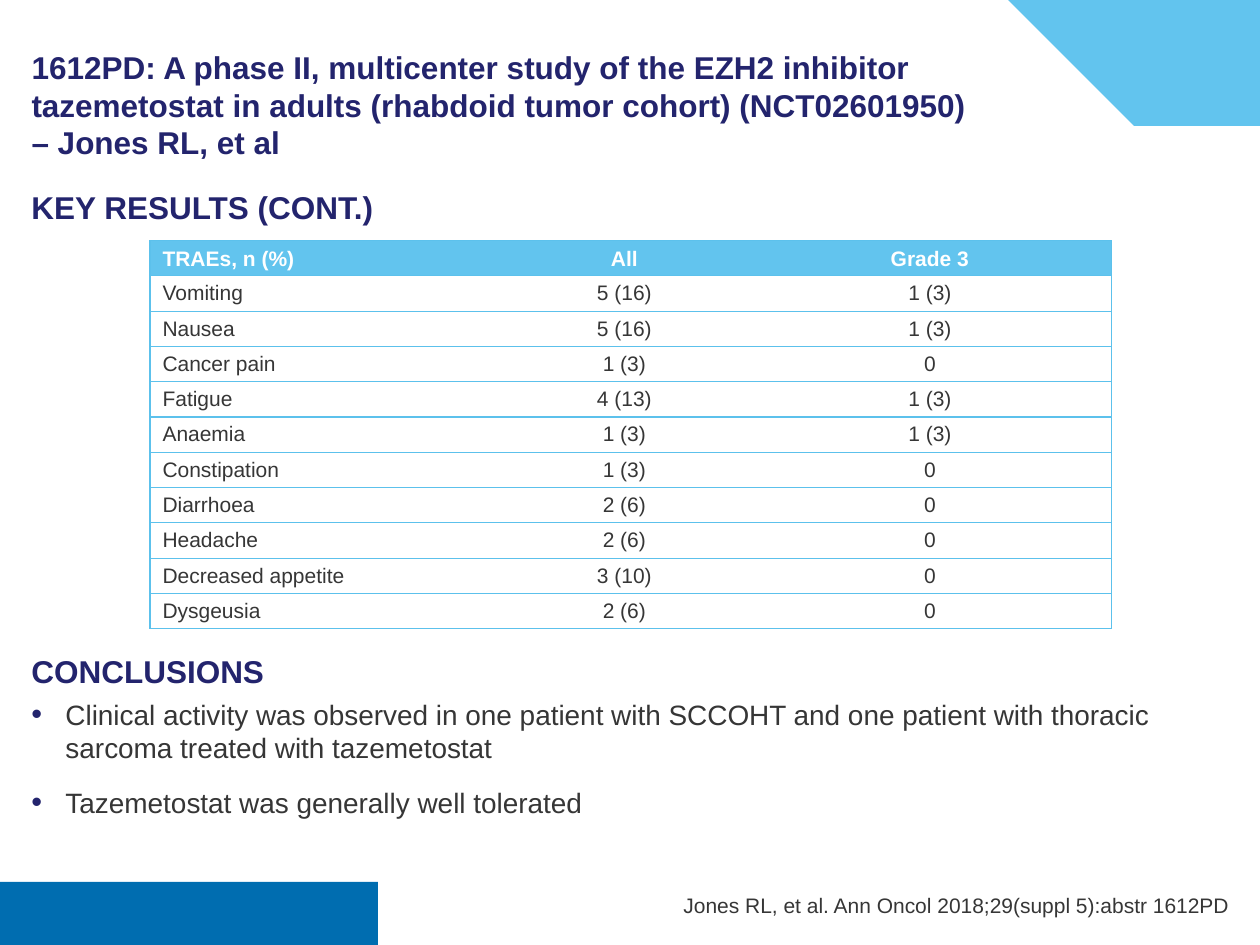
from lxml.etree import SubElement
from pptx import Presentation
from pptx.dml.color import RGBColor
from pptx.enum.text import MSO_ANCHOR, MSO_AUTO_SIZE, PP_ALIGN
from pptx.oxml.ns import qn
from pptx.util import Inches, Pt

COLORS = {"sky": "62C4EE", "blue": "006DB0", "navy": "23246D",
          "text": "363636", "rule": "5CC1EC", "white": "FFFFFF"}
FONT = "Arial"
PLAIN_TABLE_STYLE = "{2D5ABB26-0587-4C30-8999-92F81FD0307C}"

TITLE = ("1612PD: A phase II, multicenter study of the EZH2 inhibitor "
         "tazemetostat in adults (rhabdoid tumor cohort) (NCT02601950) "
         "\v– Jones RL, et al")
RESULTS_HEADING = "KEY RESULTS (CONT.)"
CONCLUSIONS_HEADING = "CONCLUSIONS"
CONCLUSIONS = [
    "Clinical activity was observed in one patient with SCCOHT and one "
    "patient with thoracic sarcoma treated with tazemetostat",
    "Tazemetostat was generally well tolerated",
]
CITATION = "Jones RL, et al. Ann Oncol 2018;29(suppl 5):abstr 1612PD"
ADVERSE_EVENTS = [
    ("TRAEs, n (%)", "All", "Grade 3"),
    ("Vomiting", "5 (16)", "1 (3)"),
    ("Nausea", "5 (16)", "1 (3)"),
    ("Cancer pain", "1 (3)", "0"),
    ("Fatigue", "4 (13)", "1 (3)"),
    ("Anaemia", "1 (3)", "1 (3)"),
    ("Constipation", "1 (3)", "0"),
    ("Diarrhoea", "2 (6)", "0"),
    ("Headache", "2 (6)", "0"),
    ("Decreased appetite", "3 (10)", "0"),
    ("Dysgeusia", "2 (6)", "0"),
]
COLUMN_WIDTHS = [2.78, 1.97, 2.88]
TABLE_LEFT, TABLE_TOP, TABLE_HEIGHT = 1.19, 1.91, 3.07

# Outlines in inches: a pair is a straight step, a triple of pairs is a Bézier curve
WAVES = [
    ("sky", [(5.15, 0), (10, 0), (10, 1.19), (9.93, 1.12),
             ((9.89, 1.09), (9.86, 1.06), (9.82, 1.03)),
             ((9.17, 0.62), (8.64, 0.43), (6.08, 0.18)),
             ((5.77, 0.15), (5.49, 0.09), (5.23, 0.02))]),
    ("blue", [(0.67, 6.77),
              ((1.45, 6.75), (2.18, 7.19), (2.52, 7.47)),
              (2.55, 7.5), (0, 7.5), (0, 6.92), (0.09, 6.88),
              ((0.28, 6.81), (0.48, 6.77), (0.67, 6.77))]),
]


def rgb(name):
    return RGBColor.from_string(COLORS[name])


def style(paragraph, size, color, bold=False, align=PP_ALIGN.LEFT):
    font = paragraph.font
    font.name, font.size, font.bold = FONT, Pt(size), bold
    font.color.rgb = rgb(color)
    paragraph.alignment = align


def set_insets(frame, left, top, right, bottom):
    """Set margins, in inches, of a text frame or a table cell."""
    frame.margin_left, frame.margin_top = Inches(left), Inches(top)
    frame.margin_right, frame.margin_bottom = Inches(right), Inches(bottom)


def flatten(outline, steps=24):
    """Turn an outline with Bézier curves into a list of points."""
    points = []
    for part in outline:
        if not isinstance(part[0], tuple):
            points.append(part)
            continue
        controls = [points[-1], *part]
        for step in range(1, steps + 1):
            t = step / steps
            weights = [(1 - t) ** 3, 3 * t * (1 - t) ** 2, 3 * t * t * (1 - t), t ** 3]
            points.append(tuple(sum(w * c[axis] for w, c in zip(weights, controls))
                                for axis in (0, 1)))
    return points


def add_wave(slide, color, outline):
    """Draw a decorative wave behind the text."""
    start, *others = flatten(outline)
    builder = slide.shapes.build_freeform(*start, scale=Inches(1))
    builder.add_line_segments(others, close=True)
    wave = builder.convert_to_shape()
    wave.fill.solid()
    wave.fill.fore_color.rgb = rgb(color)
    wave.line.fill.background()
    wave.shadow.inherit = False
    slide.shapes.element.insert(2, wave.element)


def add_title(slide):
    title = slide.shapes.title
    title.left, title.top = Inches(0.25), Inches(0.25)
    title.width, title.height = Inches(8.1), Inches(1.03)
    frame = title.text_frame
    frame.text = TITLE
    frame.word_wrap = True
    frame.auto_size = MSO_AUTO_SIZE.NONE
    frame.vertical_anchor = MSO_ANCHOR.BOTTOM
    set_insets(frame, 0, 0.05, 0, 0)
    style(frame.paragraphs[0], 18, "navy", bold=True)


def add_bullet(paragraph):
    properties = paragraph._p.get_or_add_pPr()
    properties.set("marL", str(Inches(0.27)))
    properties.set("indent", str(-Inches(0.27)))
    bullet_color = SubElement(properties, qn("a:buClr"))
    SubElement(bullet_color, qn("a:srgbClr"), val=COLORS["navy"])
    SubElement(properties, qn("a:buSzPct"), val="110000")
    SubElement(properties, qn("a:buFont"), typeface=FONT)
    SubElement(properties, qn("a:buChar"), char="•")


def add_body(slide):
    frame = slide.shapes.add_textbox(
        Inches(0.25), Inches(1.44), Inches(9.5), Inches(5.81)).text_frame
    frame.word_wrap = True
    set_insets(frame, 0, 0.05, 0, 0.05)
    frame.text = "\n".join([RESULTS_HEADING, CONCLUSIONS_HEADING, *CONCLUSIONS])
    headings, conclusions = frame.paragraphs[:2], frame.paragraphs[2:]
    for heading in headings:
        style(heading, 18, "navy", bold=True)
        heading.space_after = Pt(4)
    headings[1].space_before = Pt(240)  # leaves room for the table
    for conclusion in conclusions:
        style(conclusion, 16, "text")
        conclusion.space_after = Pt(12)
        add_bullet(conclusion)


def add_borders(cell, sides):
    properties = cell._tc.get_or_add_tcPr()
    for side in sides:
        line = SubElement(properties, qn(f"a:ln{side}"), w=str(Pt(0.75)))
        fill = SubElement(line, qn("a:solidFill"))
        SubElement(fill, qn("a:srgbClr"), val=COLORS["rule"])


def add_events_table(slide):
    frame = slide.shapes.add_table(
        len(ADVERSE_EVENTS), len(COLUMN_WIDTHS), Inches(TABLE_LEFT), Inches(TABLE_TOP),
        Inches(sum(COLUMN_WIDTHS)), Inches(TABLE_HEIGHT))
    table = frame.table
    table.horz_banding = False
    table._tbl.tblPr.find(qn("a:tableStyleId")).text = PLAIN_TABLE_STYLE
    for column, width in zip(table.columns, COLUMN_WIDTHS):
        column.width = Inches(width)
    outer_sides = {0: "L", len(COLUMN_WIDTHS) - 1: "R"}
    for row, event in enumerate(ADVERSE_EVENTS):
        header = row == 0
        for column, value in enumerate(event):
            cell = table.cell(row, column)
            cell.text = value
            set_insets(cell, 0.1, 0.04, 0.1, 0.04)
            cell.vertical_anchor = MSO_ANCHOR.BOTTOM if header else MSO_ANCHOR.MIDDLE
            style(cell.text_frame.paragraphs[0], 12, "white" if header else "text",
                  bold=header, align=PP_ALIGN.CENTER if column else PP_ALIGN.LEFT)
            add_borders(cell, outer_sides.get(column, "") + "TB")
            if header:
                cell.fill.solid()
                cell.fill.fore_color.rgb = rgb("sky")
            else:
                cell.fill.background()


def add_citation(slide):
    frame = slide.shapes.add_textbox(
        Inches(5.39), Inches(7.08), Inches(4.37), Inches(0.2)).text_frame
    frame.text = CITATION
    frame.word_wrap = False
    frame.auto_size = MSO_AUTO_SIZE.SHAPE_TO_FIT_TEXT
    frame.vertical_anchor = MSO_ANCHOR.BOTTOM
    set_insets(frame, 0, 0, 0, 0)
    style(frame.paragraphs[0], 12, "text", align=PP_ALIGN.RIGHT)


def main():
    presentation = Presentation()
    presentation.slide_width, presentation.slide_height = Inches(10), Inches(7.5)
    slide = presentation.slides.add_slide(presentation.slide_layouts[5])
    for color, outline in WAVES:
        add_wave(slide, color, outline)
    add_title(slide)
    add_body(slide)
    add_citation(slide)
    add_events_table(slide)
    presentation.save("out.pptx")


if __name__ == "__main__":
    main()
